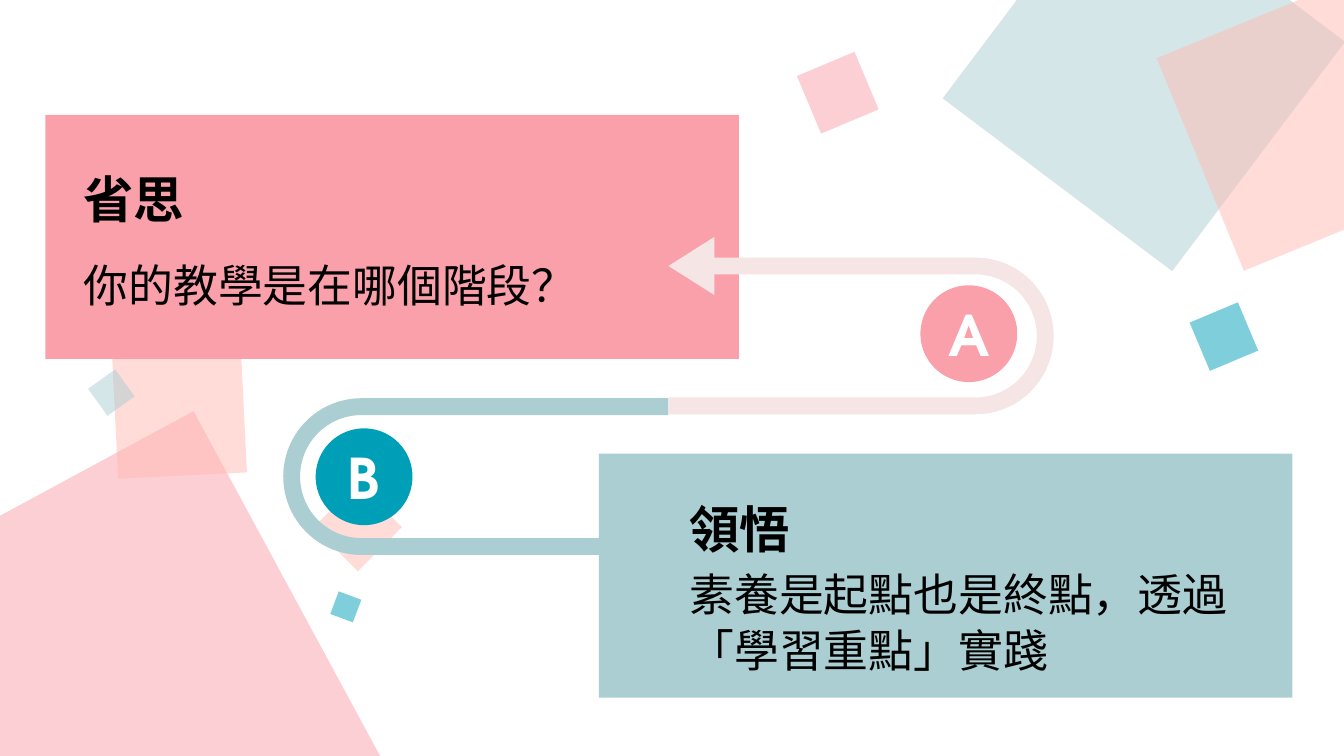
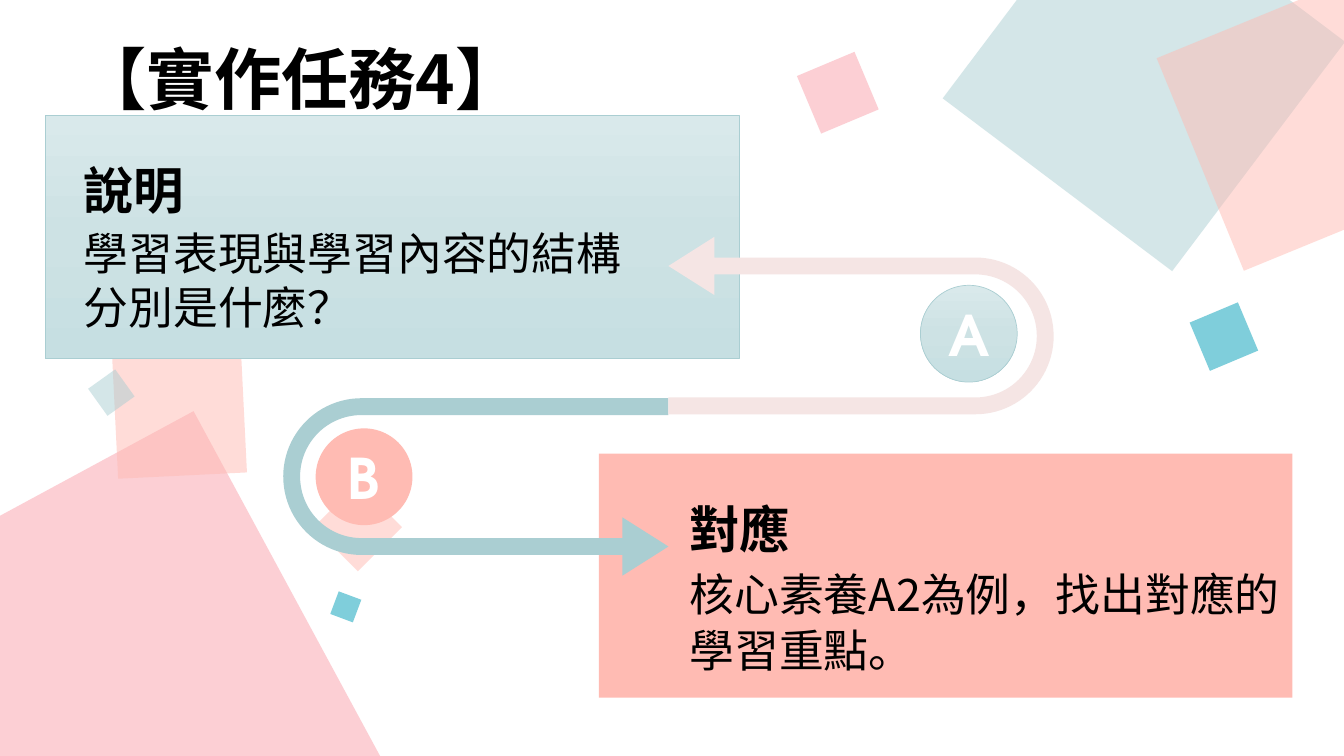
from copy import deepcopy
from dataclasses import dataclass

from lxml import etree
from pptx import Presentation, util as u
from pptx.dml.color import RGBColor
from pptx.enum import shapes, text
from pptx.oxml.ns import qn

COLORS = {
    "pink": "FAA0AA", "coral": "FFBBB3", "mist": "AACED2", "teal": "009FB8",
    "blush": "F5E5E4", "black": "000000", "white": "FFFFFF",
}
MIST_FADE = ("D9E9EB", "CDE2E4", "C6DFE2")
BODY_FONT, BADGE_FONT = "Noto Sans CJK SC", "TeX Gyre Adventor"
TITLE_ONLY, BLANK = 5, 6

# Centre x, centre y and side (percent of slide width), rotation, colour
CONFETTI = [
    (8.25, 91.07, 30.46, 331.6, "pink"),
    (13.35, 54.4, 9.6, 357.2, "coral"),
    (26.63, 69.73, 4.65, 315, "coral"),
    (8.29, 51.93, 2.48, 324.4, "mist"),
    (85.11, 9.27, 21.38, 37, "mist"),
    (97.22, 16, 17.1, 337.7, "coral"),
    (62.34, 12.27, 4.65, 337.2, "pink"),
    (91.07, 44.53, 3.9, 337.2, "teal"),
    (25.73, 80.27, 1.8, 290.5, "teal"),
]


@dataclass
class Box:
    left: int
    top: int
    width: int
    height: int

    def area(self, x, y, w, h):
        """Return the box inside this one, given in percent of its size."""
        return Box(int(self.left + self.width * x / 100),
                   int(self.top + self.height * y / 100),
                   int(self.width * w / 100), int(self.height * h / 100))

    def turned(self):
        """Return the frame that covers this box after a quarter turn."""
        shift = (self.width - self.height) // 2
        return Box(self.left + shift, self.top - shift, self.height, self.width)

    def frame(self):
        return self.left, self.top, self.width, self.height


PAGE = Box(0, 0, u.Inches(13.33), u.Inches(7.5))


@dataclass
class Side:
    """Places on one half of the S-shaped path."""
    letter: str
    panel: Box
    bend: Box
    badge_at: tuple
    turn: int
    arrow: str
    text_x: float
    body_width: float


SIDE_A = Side("A", PAGE.area(3.38, 15.2, 51.6, 32.27),
              PAGE.area(49.74, 31.33, 28.66, 23.47),
              (65.4, 27.3), 90, "blush", 4.07, 81.5)
SIDE_B = Side("B", PAGE.area(44.56, 60, 51.6, 32.27),
              PAGE.area(21.08, 52.67, 28.66, 23.47),
              (8.4, 17), 270, "mist", 11.63, 89.4)


def rgb(name):
    return RGBColor.from_string(COLORS[name])


def fill_fade(shape):
    """Fade downwards through three tints, with a thin edge."""
    shape.fill.gradient()
    shape.fill.gradient_angle = 270
    stop_list = shape.element.spPr.find(qn("a:gradFill")).find(qn("a:gsLst"))
    middle = deepcopy(stop_list[0])
    middle.set("pos", "50000")
    stop_list.insert(1, middle)
    for stop, tint in zip(shape.fill.gradient_stops, MIST_FADE):
        stop.color.rgb = RGBColor.from_string(tint)
    shape.line.color.rgb = rgb("mist")
    shape.line.width = u.Pt(0.5)


def add_block(slide, kind, box, color):
    block = slide.shapes.add_shape(kind, *box.frame())
    block.shadow.inherit = False
    if color == "fade":
        fill_fade(block)
    else:
        block.fill.solid()
        block.fill.fore_color.rgb = rgb(color)
        block.line.fill.background()
    return block


def write(paragraph, words, size, color="black", bold=False, font=BODY_FONT):
    run = paragraph.add_run()
    run.text = words
    run.font.size = u.Pt(size)
    run.font.bold = bold
    run.font.name = font
    run.font.color.rgb = rgb(color)
    latin = run.font._element.find(qn("a:latin"))
    east_asian = etree.Element(qn("a:ea"), typeface=font)
    latin.addnext(east_asian)


def add_words(slide, box, words, size, spacing, bold=False):
    frame = slide.shapes.add_textbox(*box.frame()).text_frame
    frame.word_wrap = True
    frame.auto_size = text.MSO_AUTO_SIZE.SHAPE_TO_FIT_TEXT
    frame.paragraphs[0].line_spacing = spacing
    write(frame.paragraphs[0], words, size, bold=bold)


def scatter_confetti(slide, master):
    """Draw the translucent squares and hand them to the master."""
    for number, (x, y, side, angle, color) in enumerate(CONFETTI, start=101):
        length = PAGE.width * side / 100
        centre = PAGE.area(x, y, 0, 0)
        box = Box(int(centre.left - length / 2), int(centre.top - length / 2),
                  int(length), int(length))
        square = add_block(slide, shapes.MSO_SHAPE.RECTANGLE, box, color)
        square.rotation = angle
        tone = square.element.spPr.find(qn("a:solidFill"))[0]
        etree.SubElement(tone, qn("a:alpha"), val="50000")
        square.element.nvSpPr.cNvPr.set("id", str(number))
        master.shapes.element.append(square.element)


def add_arrow(slide, side):
    arrow = add_block(slide, shapes.MSO_SHAPE.U_TURN_ARROW,
                      side.bend.turned(), side.arrow)
    arrow.rotation = side.turn
    arrow.element.spPr.xfrm.set("flipH", "1")
    for i, value in enumerate((0.095, 0.164, 0.259, 0.441, 1)):
        arrow.adjustments[i] = value


def add_badge(slide, side, color):
    badge = add_block(slide, shapes.MSO_SHAPE.OVAL,
                      side.bend.area(*side.badge_at, 25.13, 54.55), color)
    frame = badge.text_frame
    frame.margin_left = frame.margin_right = 0
    frame.word_wrap = False
    frame.vertical_anchor = text.MSO_ANCHOR.MIDDLE
    frame.paragraphs[0].alignment = text.PP_ALIGN.CENTER
    write(frame.paragraphs[0], side.letter, 40, "white", True, BADGE_FONT)


def add_step(slide, side, heading, body, panel_color, badge_color,
             body_spacing, heading_y=8.7, body_y=43.5):
    add_block(slide, shapes.MSO_SHAPE.RECTANGLE, side.panel, panel_color)
    add_arrow(slide, side)
    add_badge(slide, side, badge_color)
    add_words(slide, side.panel.area(side.text_x, body_y, side.body_width, 49),
              body, 32, body_spacing)
    add_words(slide, side.panel.area(side.text_x, heading_y, 45.8, 33.5),
              heading, 36, 1.3, bold=True)


def set_title(slide, words):
    title = slide.shapes.title
    title.left, title.top, title.width, title.height = PAGE.area(
        5.18, 7.07, 45.99, 7.73).frame()
    frame = title.text_frame
    frame.word_wrap = True
    frame.auto_size = text.MSO_AUTO_SIZE.NONE
    frame.vertical_anchor = text.MSO_ANCHOR.MIDDLE
    paragraph = frame.paragraphs[0]
    paragraph.alignment = text.PP_ALIGN.LEFT
    paragraph.line_spacing = 0.9
    paragraph.space_before = u.Pt(10)
    write(paragraph, words, 48, bold=True)


def build_reflection(deck):
    slide = deck.slides.add_slide(deck.slide_layouts[BLANK])
    add_step(slide, SIDE_B, "領悟", "素養是起點也是終點，透過「學習重點」實踐",
             "mist", "teal", u.Pt(40))
    add_step(slide, SIDE_A, "省思", "你的教學是在哪個階段？",
             "pink", "pink", 1.3, heading_y=12.4, body_y=50)
    scatter_confetti(slide, deck.slide_master)


def build_task(deck):
    slide = deck.slides.add_slide(deck.slide_layouts[TITLE_ONLY])
    set_title(slide, "【實作任務4】")
    add_step(slide, SIDE_B, "對應", "核心素養A2為例，找出對應的學習重點。",
             "coral", "coral", u.Pt(40))
    add_step(slide, SIDE_A, "說明", "學習表現與學習內容的結構分別是什麼？",
             "fade", "fade", 1.0)


def main():
    deck = Presentation()
    deck.slide_width, deck.slide_height = PAGE.width, PAGE.height
    build_reflection(deck)
    build_task(deck)
    deck.save("out.pptx")


if __name__ == "__main__":
    main()
